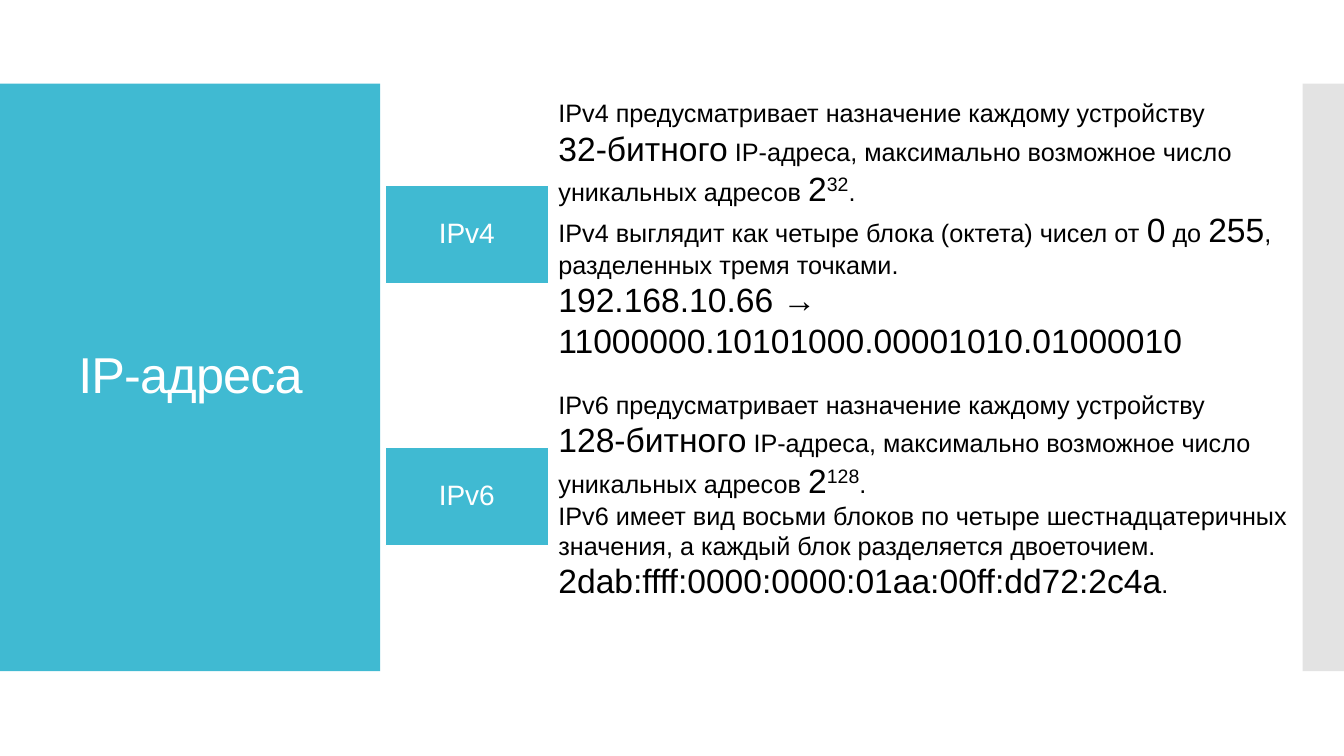
from dataclasses import dataclass

from lxml import etree
from pptx import Presentation
from pptx import util as u
from pptx.dml.color import RGBColor
from pptx.enum import shapes, text
from pptx.oxml.ns import qn

PX = u.Inches(1) // 100  # 100 px to the inch


@dataclass(frozen=True)
class Theme:
    font: str = "Arial"
    accent: str = "40BAD2"
    side: str = "C8C8C8"
    light: str = "FFFFFF"
    dark: str = "000000"
    title: int = 36
    label: int = 20
    body: int = 18
    strong: int = 24


THEME = Theme()
BODY, STRONG, POWER = "body", "strong", "power"

# Each paragraph is a list of (text, style) runs
PROTOCOLS = [
    ("IPv4", 184, 92, 283, [
        [("IPv4 предусматривает назначение каждому устройству \n", BODY),
         ("32-битного", STRONG),
         (" IP-адреса, максимально возможное число уникальных адресов ", BODY),
         ("2", STRONG), ("32", POWER), (".", BODY)],
        [("IPv4 выглядит как четыре блока (октета) чисел от ", BODY),
         ("0", STRONG), (" до ", BODY), ("255", STRONG),
         (", разделенных тремя точками.", BODY)],
        [("192.168.10.66 → 11000000.10101000.00001010.01000010", STRONG)],
    ]),
    ("IPv6", 444, 381, 222, [
        [("IPv6 предусматривает назначение каждому устройству \n", BODY),
         ("128-битного", STRONG),
         (" IP-адреса, максимально возможное число уникальных адресов ", BODY),
         ("2", STRONG), ("128", POWER), (".", BODY)],
        [("IPv6 имеет вид восьми блоков по четыре шестнадцатеричных "
          "значения, а каждый блок разделяется двоеточием.", BODY)],
        [("2dab:ffff:0000:0000:01aa:00ff:dd72:2c4a", STRONG), (".", BODY)],
    ]),
]


def place(*lengths):
    return [length * PX for length in lengths]


def add_panel(slide, box, color, opacity=100, line_color=None):
    shape = slide.shapes.add_shape(shapes.MSO_SHAPE.RECTANGLE, *place(*box))
    shape.shadow.inherit = False
    shape.fill.solid()
    shape.fill.fore_color.rgb = RGBColor.from_string(color)
    if opacity < 100:
        fill_color = shape.fill._xPr.find(".//" + qn("a:srgbClr"))
        etree.SubElement(fill_color, qn("a:alpha"), val=str(opacity * 1000))
    if line_color:
        shape.line.color.rgb = RGBColor.from_string(line_color)
        shape.line.width = u.Pt(0.85)
    else:
        shape.line.fill.background()
    return shape


def add_run(paragraph, wording, size, color):
    run = paragraph.add_run()
    run.text = wording
    run.font.name = THEME.font
    run.font.size = u.Pt(size)
    run.font.color.rgb = RGBColor.from_string(color)
    return run


def write_centered(shape, wording, size):
    frame = shape.text_frame
    frame.word_wrap = True
    frame.vertical_anchor = text.MSO_ANCHOR.MIDDLE
    paragraph = frame.paragraphs[0]
    paragraph.alignment = text.PP_ALIGN.CENTER
    paragraph.line_spacing = 0.9
    return add_run(paragraph, wording, size, THEME.light)


def add_label(slide, box, wording):
    label = add_panel(slide, box, THEME.accent, line_color=THEME.light)
    frame = label.text_frame
    frame.margin_left = frame.margin_right = 8 * PX
    frame.margin_top = frame.margin_bottom = 8 * PX
    write_centered(label, wording, THEME.label)


def add_description(slide, box, paragraphs):
    frame = slide.shapes.add_textbox(*place(*box)).text_frame
    frame.word_wrap = True
    frame.auto_size = text.MSO_AUTO_SIZE.SHAPE_TO_FIT_TEXT
    for index, runs in enumerate(paragraphs):
        paragraph = frame.add_paragraph() if index else frame.paragraphs[0]
        for wording, style in runs:
            size = THEME.body if style == BODY else THEME.strong
            run = add_run(paragraph, wording.rstrip("\n"), size, THEME.dark)
            if style == POWER:
                run._r.get_or_add_rPr().set("baseline", "30000")
            if wording.endswith("\n"):
                paragraph.add_line_break()


def add_title(slide, box, wording):
    title = slide.shapes.add_textbox(*place(*box))
    run = write_centered(title, wording, THEME.title)
    run._r.get_or_add_rPr().set("spc", "-60")


def main():
    presentation = Presentation()
    presentation.slide_width, presentation.slide_height = place(1333, 750)
    slide = presentation.slides.add_slide(presentation.slide_layouts[6])

    # Side panels and title
    add_panel(slide, (0, 83, 377, 583), THEME.accent)
    add_panel(slide, (1292, 83, 41, 583), THEME.side, opacity=50)
    add_title(slide, (28, 123, 322, 503), "IP-адреса")

    # Protocol labels with their descriptions
    for name, label_top, text_top, text_height, paragraphs in PROTOCOLS:
        add_label(slide, (382, label_top, 162, 97), name)
        add_description(slide, (544, text_top, 752, text_height), paragraphs)

    presentation.save("out.pptx")


if __name__ == "__main__":
    main()
